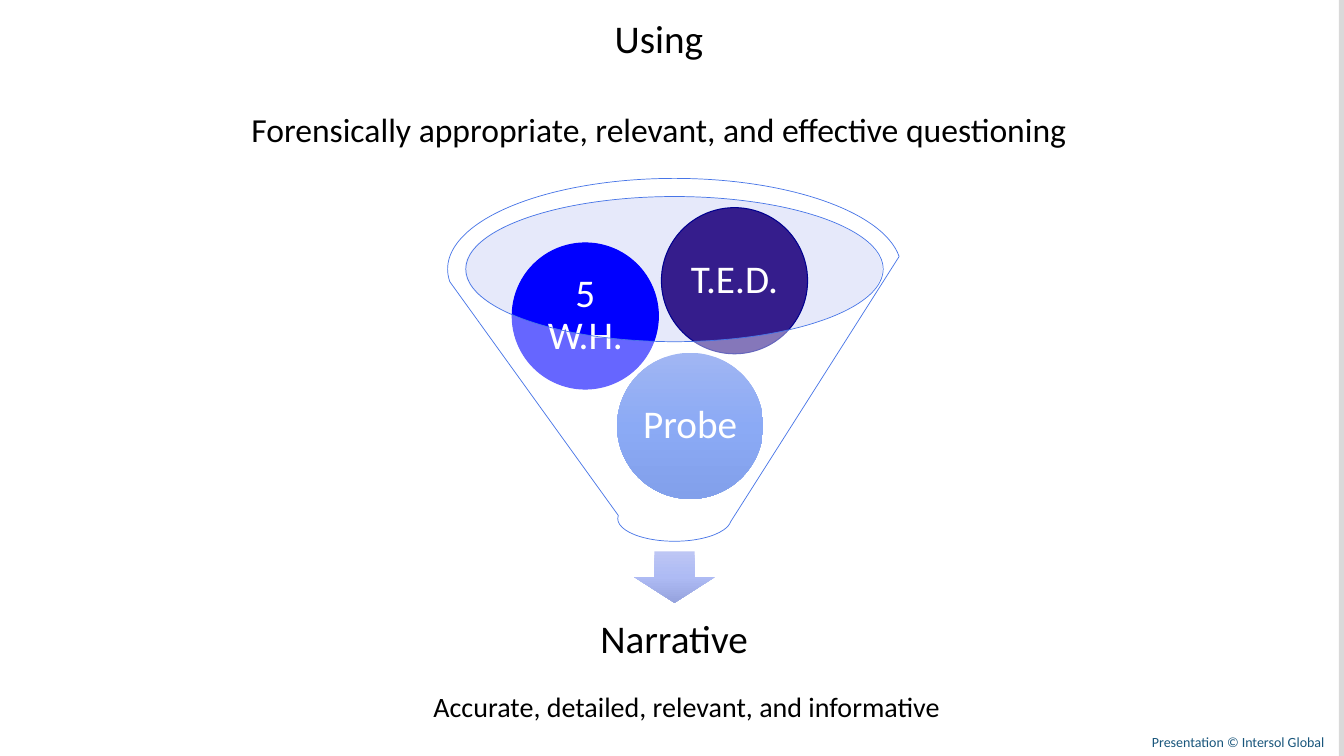
from copy import deepcopy
from dataclasses import dataclass

from lxml import etree
from pptx import Presentation
from pptx import util as u
from pptx.dml.color import RGBColor
from pptx.enum import shapes, text
from pptx.oxml import ns


@dataclass(frozen=True)
class Theme:
    font: str = "Calibri"
    ink: str = "000000"
    light: str = "FFFFFF"
    edge: str = "D9D9D9"
    credit: str = "19567C"
    rim: str = "C1CAF3"
    outline: str = "4775E7"
    question: tuple = ("0000FF", "0000FF")
    ted: tuple = ("351D8C", "000090")
    probe: tuple = ("6386EB", "3F72EF", "2F61DE")
    arrow: tuple = ("BDC6F4", "AEBBF4", "96A3DE")
    large: int = 28
    medium: int = 24
    small: int = 20
    tiny: int = 10


class SlideBuilder:
    def __init__(self, page, theme):
        self.page = page
        self.theme = theme

    def place(self, item, area):
        for name, value in zip(("left", "top", "width", "height"), area):
            setattr(item, name, u.Inches(value))

    def set_text(self, item, lines, color, align="CENTER", anchor="TOP",
                 inset=(0.1, 0.05), spacing=1.0, gap=0):
        frame = item.text_frame
        side, end = (u.Inches(value) for value in inset)
        settings = {"word_wrap": True, "auto_size": text.MSO_AUTO_SIZE.NONE,
                    "vertical_anchor": text.MSO_ANCHOR[anchor],
                    "margin_left": side, "margin_right": side,
                    "margin_top": end, "margin_bottom": end}
        for name, value in settings.items():
            setattr(frame, name, value)
        for index, (words, size) in enumerate(lines):
            para = frame.add_paragraph() if index else frame.paragraphs[0]
            layout = {"alignment": text.PP_ALIGN[align], "line_spacing": spacing,
                      "space_before": u.Pt(gap if index else 0)}
            for name, value in layout.items():
                setattr(para, name, value)
            span = para.add_run()
            span.text = words
            for name, value in {"name": self.theme.font, "size": u.Pt(size)}.items():
                setattr(span.font, name, value)
            span.font.color.rgb = RGBColor.from_string(color)

    def title(self, area, lines, gap):
        heading = self.page.shapes.title
        self.place(heading, area)
        self.set_text(heading, lines, self.theme.ink, gap=gap)

    def label(self, area, words, size, color, **layout):
        box = self.page.shapes.add_textbox(*map(u.Inches, area))
        self.set_text(box, [(words, size)], color, **layout)

    def shape(self, kind, area, fill, alpha=None, line=None, weight=0.75):
        item = self.page.shapes.add_shape(
            shapes.MSO_SHAPE[kind], *map(u.Inches, area))
        item.shadow.inherit = False
        if isinstance(fill, tuple):
            self.gradient(item, fill)
        else:
            item.fill.solid()
            item.fill.fore_color.rgb = RGBColor.from_string(fill)
        if alpha is not None:
            color = item._element.spPr.find(ns.qn("a:solidFill"))[0]
            etree.SubElement(color, ns.qn("a:alpha"), val=str(alpha * 1000))
        if line:
            item.line.color.rgb = RGBColor.from_string(line)
            item.line.width = u.Pt(weight)
        else:
            item.line.fill.background()
        return item

    def gradient(self, item, colors):
        item.fill.gradient()
        item.fill.gradient_angle = 270
        stop_list = item._element.spPr.find(".//" + ns.qn("a:gsLst"))
        while len(stop_list) < len(colors):
            stop_list.append(deepcopy(stop_list[-1]))
        for index, (stop, color) in enumerate(zip(item.fill.gradient_stops, colors)):
            stop.position = index / (len(colors) - 1)
            stop.color.rgb = RGBColor.from_string(color)

    def ball(self, left, top, words, fill, line=None):
        item = self.shape("OVAL", (left, top, 1.45, 1.45), fill, line=line)
        self.set_text(item, [(words, self.theme.large)], self.theme.light,
                      anchor="MIDDLE", inset=(0.04, 0.04), spacing=0.9)


def main():
    theme = Theme()
    deck = Presentation()
    deck.slide_width, deck.slide_height = u.Inches(13.33), u.Inches(7.5)
    slide = SlideBuilder(deck.slides.add_slide(deck.slide_layouts[5]), theme)

    slide.shape("RECTANGLE", (13.28, 0, 0.05, 7.5), theme.edge)
    slide.label((11.23, 7.23, 2.1, 0.27), "Presentation © Intersol Global",
                theme.tiny, theme.credit)
    slide.title((1.07, 0.09, 10.93, 1.75), [
        ("Using", theme.large),
        ("Forensically appropriate, relevant, and effective questioning", theme.medium),
    ], gap=34)

    slide.shape("OVAL", (4.61, 1.95, 4.14, 1.44), theme.rim, alpha=40)
    slide.shape("DOWN_ARROW", (6.29, 5.47, 0.8, 0.51), theme.arrow)
    slide.label((4.76, 5.88, 3.85, 0.96), "Narrative", theme.large, theme.ink,
                anchor="MIDDLE", inset=(0.22, 0.22), spacing=0.9)
    slide.ball(6.12, 3.5, "Probe", theme.probe)
    slide.ball(5.08, 2.41, "5 W.H.", *theme.question)
    slide.ball(6.56, 2.06, "T.E.D.", *theme.ted)
    slide.shape("FUNNEL", (4.44, 1.77, 4.5, 3.6), theme.light, alpha=40,
                line=theme.outline, weight=0.5)
    slide.label((4.2, 6.79, 5.29, 0.44), "Accurate, detailed, relevant, and informative",
                theme.small, theme.ink, align="LEFT")

    deck.save("out.pptx")


if __name__ == "__main__":
    main()
